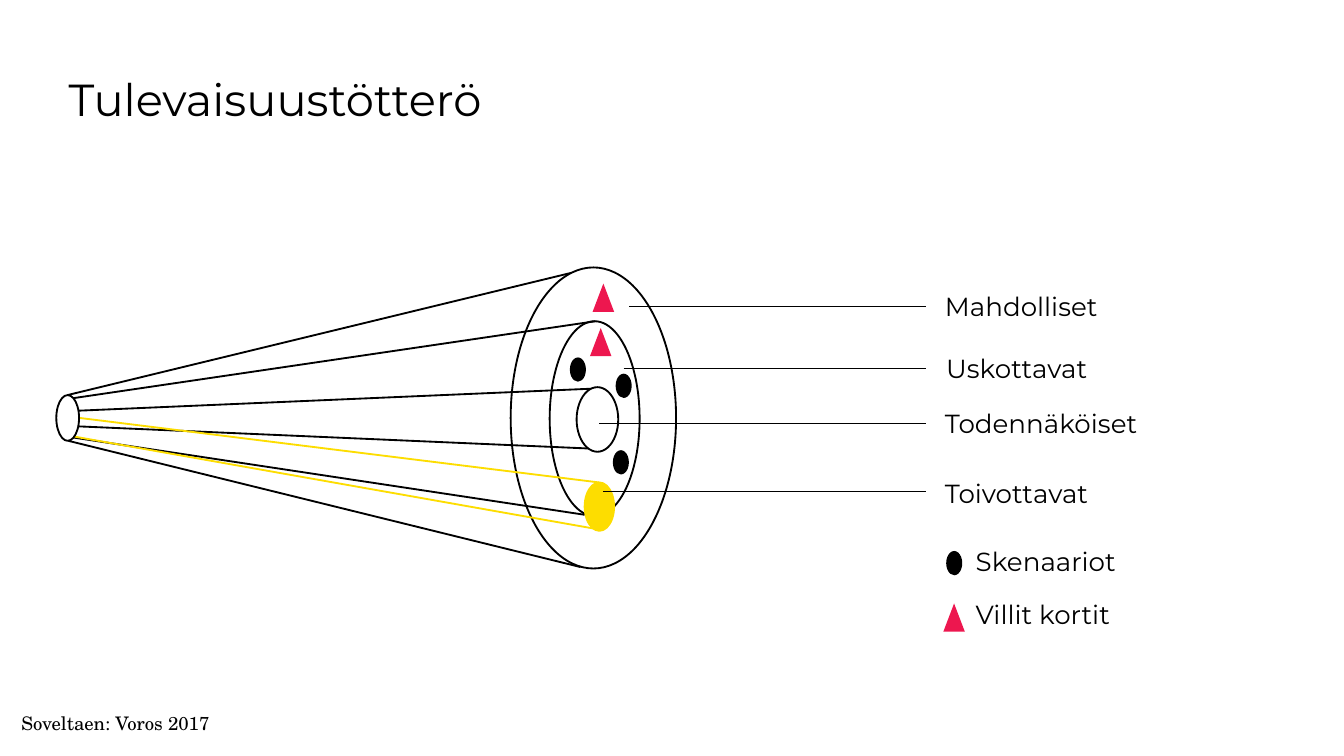
from dataclasses import dataclass
from typing import Optional

from lxml.etree import SubElement
from pptx import Presentation
from pptx.dml.color import RGBColor
from pptx.enum.shapes import MSO_CONNECTOR, MSO_SHAPE
from pptx.enum.text import MSO_ANCHOR
from pptx.oxml.ns import qn
from pptx.util import Pt


@dataclass(frozen=True)
class Theme:
    black: str = "000000"
    white: str = "FFFFFF"
    yellow: str = "FDDD00"
    red: str = "ED174F"
    font: str = "Montserrat"
    source_font: str = "TeX Gyre Schola"
    title_size: float = 24
    label_size: float = 14
    source_size: float = 10
    outline: float = 1
    leader: float = 0.5


THEME = Theme()


@dataclass(frozen=True)
class Ring:
    left: float
    top: float
    width: float
    height: float
    fill: Optional[str] = None
    line: Optional[str] = THEME.black


@dataclass(frozen=True)
class Ray:
    start: tuple[float, float]
    end: tuple[float, float]
    color: str = THEME.black


@dataclass(frozen=True)
class Callout:
    text: str
    leader_start: float
    leader_y: float
    text_left: float
    text_top: float
    text_width: float


@dataclass(frozen=True)
class Marker:
    kind: MSO_SHAPE
    width: float
    height: float
    color: str


@dataclass(frozen=True)
class LegendEntry:
    marker: Marker
    left: float
    top: float
    text: str
    text_top: float


DOT = Marker(MSO_SHAPE.OVAL, 8.6, 13, THEME.black)
TRIANGLE = Marker(MSO_SHAPE.FLOWCHART_EXTRACT, 11.5, 15.1, THEME.red)

BLACK_RAYS = [
    Ray((36, 220.3), (320.4, 208.1)),
    Ray((36, 213.8), (319, 172.1)),
    Ray((36, 211.7), (306, 146.2)),
    Ray((36.7, 228.2), (320.4, 240.5)),
    Ray((36.7, 234), (313.2, 275.8)),
    Ray((36.7, 236.2), (311, 303.8)),
]
FUTURE_RINGS = [
    Ring(308.9, 207.4, 22.3, 34.6, THEME.white),
    Ring(294.5, 172.1, 48.2, 104.4),
    Ring(273.6, 143.3, 88.6, 161.3),
    Ring(313.2, 258.5, 15.8, 25.9, THEME.yellow, THEME.yellow),
]
YELLOW_RAYS = [
    Ray((32.4, 232.6), (321.1, 283.7), THEME.yellow),
    Ray((42.5, 223.9), (321.1, 258.5), THEME.yellow),
]
PRESENT_RING = Ring(30.2, 211.7, 12.2, 24.5, THEME.white)
SCENARIOS = [(328.3, 241.2), (305.3, 191.5), (329.8, 200.2)]
WILD_CARDS = [(317.5, 151.9), (316.1, 175.7)]

LEADER_END = 496.1
CALLOUTS = [
    Callout("Mahdolliset", 337, 164.2, 506.2, 155.5, 95.8),
    Callout("Uskottavat", 334.1, 197.3, 506.9, 188.6, 85),
    Callout("Todennäköiset", 321.1, 226.8, 506.2, 218.2, 123.8),
    Callout("Toivottavat", 323.3, 263.5, 506.2, 256, 115.9),
]
LEGEND = [
    LegendEntry(DOT, 506.9, 295.2, "Skenaariot", 292.3),
    LegendEntry(TRIANGLE, 505.4, 323.3, "Villit kortit", 320.4),
]


def add_text(slide, text: str, *, left: float, top: float, width: float,
             height: float = 17.3, size: float = THEME.label_size,
             font: str = THEME.font, anchor=MSO_ANCHOR.TOP,
             margin_left: float = 0, margin_bottom: float = 0) -> None:
    box = slide.shapes.add_textbox(Pt(left), Pt(top), Pt(width), Pt(height))
    frame = box.text_frame
    frame.word_wrap = True
    frame.vertical_anchor = anchor
    frame.margin_left, frame.margin_bottom = Pt(margin_left), Pt(margin_bottom)
    frame.margin_right = frame.margin_top = 0
    run = frame.paragraphs[0].add_run()
    run.text = text
    run.font.name = font
    run.font.size = Pt(size)
    run.font.color.rgb = RGBColor.from_string(THEME.black)


def add_shape(slide, kind: MSO_SHAPE, left: float, top: float, width: float,
              height: float, fill: Optional[str], line: Optional[str] = None) -> None:
    shape = slide.shapes.add_shape(kind, Pt(left), Pt(top), Pt(width), Pt(height))
    shape.shadow.inherit = False
    for target, color in ((shape.fill, fill), (shape.line.fill, line)):
        if color:
            target.solid()
            target.fore_color.rgb = RGBColor.from_string(color)
        else:
            target.background()
    if line:
        shape.line.width = Pt(THEME.outline)


def add_ring(slide, ring: Ring) -> None:
    add_shape(slide, MSO_SHAPE.OVAL, ring.left, ring.top, ring.width, ring.height,
              ring.fill, ring.line)


def add_marker(slide, marker: Marker, left: float, top: float) -> None:
    add_shape(slide, marker.kind, left, top, marker.width, marker.height, marker.color)


def add_ray(slide, ray: Ray, width: float = THEME.outline) -> None:
    connector = slide.shapes.add_connector(
        MSO_CONNECTOR.STRAIGHT, *(Pt(value) for value in ray.start + ray.end))
    connector.line.color.rgb = RGBColor.from_string(ray.color)
    connector.line.width = Pt(width)
    SubElement(connector._element.spPr, qn("a:effectLst"))


def add_callout(slide, callout: Callout) -> None:
    add_text(slide, callout.text, left=callout.text_left, top=callout.text_top,
             width=callout.text_width)
    add_ray(slide, Ray((callout.leader_start, callout.leader_y),
                       (LEADER_END, callout.leader_y)), THEME.leader)


def main() -> None:
    presentation = Presentation()
    presentation.slide_width, presentation.slide_height = Pt(720), Pt(405)
    slide = presentation.slides.add_slide(presentation.slide_layouts[6])

    add_text(slide, "Tulevaisuustötterö", left=36.7, top=20.9, width=646.6,
             height=63.4, size=THEME.title_size, anchor=MSO_ANCHOR.MIDDLE)
    add_text(slide, "Soveltaen: Voros 2017", left=0, top=381.6, width=162,
             height=23.8, size=THEME.source_size, font=THEME.source_font,
             margin_left=11.5, margin_bottom=11.5)
    for ray in BLACK_RAYS:
        add_ray(slide, ray)
    for ring in FUTURE_RINGS:
        add_ring(slide, ring)
    for ray in YELLOW_RAYS:
        add_ray(slide, ray)
    add_ring(slide, PRESENT_RING)
    for marker, positions in ((DOT, SCENARIOS), (TRIANGLE, WILD_CARDS)):
        for left, top in positions:
            add_marker(slide, marker, left, top)
    for callout in CALLOUTS:
        add_callout(slide, callout)
    for entry in LEGEND:
        add_marker(slide, entry.marker, entry.left, entry.top)
        add_text(slide, entry.text, left=522.7, top=entry.text_top, width=99.4)

    presentation.save("out.pptx")


if __name__ == "__main__":
    main()
